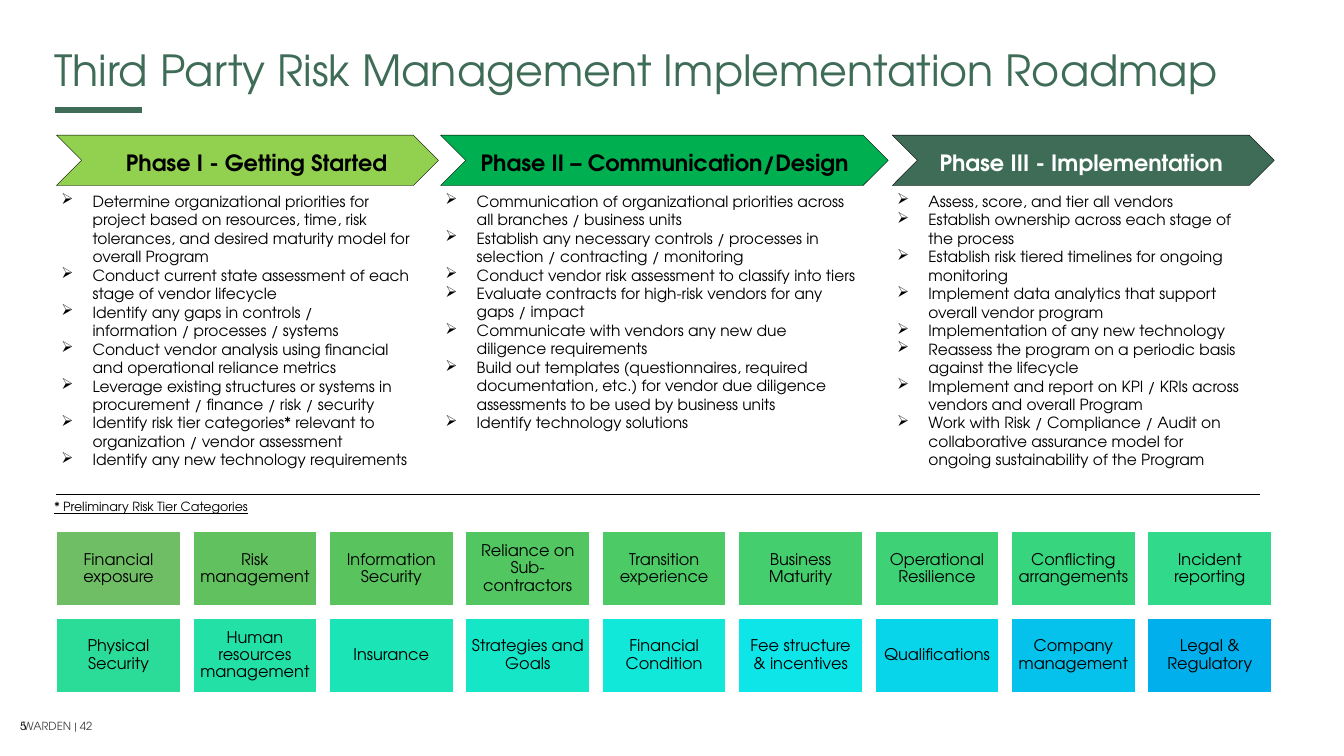
from dataclasses import dataclass

from lxml.etree import SubElement
from pptx import Presentation
from pptx.dml.color import RGBColor
from pptx.enum.shapes import MSO_CONNECTOR as Connector, MSO_SHAPE as Preset
from pptx.enum.text import MSO_ANCHOR as Anchor, PP_ALIGN as Align
from pptx.oxml.ns import qn
from pptx.util import Inches, Pt


@dataclass(frozen=True)
class Theme:
    font: str = "TeX Gyre Adventor"
    ink: str = "000000"
    paper: str = "FFFFFF"
    forest: str = "3E6C57"
    green: str = "00B050"
    lime: str = "92D050"
    footer: str = "414042"
    title_size: float = 30.6
    phase_size: float = 16
    tile_size: float = 11.5
    bullet_size: float = 11
    note_size: float = 9
    footer_size: float = 8


THEME = Theme()
WIDTH, HEIGHT = Inches(13.33), Inches(7.5)

# Columns: chevron left and width, heading left and width, list width and height
# (percent of the slide), fill, heading colour, heading, bullets
PHASES = [
    (4.2, 28.43, 8.63, 24, 27.68, 45.33, THEME.lime, THEME.ink,
     "Phase I - Getting Started", [
         "Determine organizational priorities for project based on resources, time, "
         "risk tolerances, and desired maturity model for overall Program",
         "Conduct current state assessment of each stage of vendor lifecycle",
         "Identify any gaps in controls / information / processes / systems",
         "Conduct vendor analysis using financial and operational reliance metrics",
         "Leverage existing structures or systems in procurement / finance / risk / security",
         "Identify risk tier categories* relevant to organization / vendor assessment",
         "Identify any new technology requirements"]),
    (32.78, 33.31, 35.03, 31.66, 32.26, 33.47, THEME.green, THEME.ink,
     "Phase II – Communication/Design", [
         "Communication of organizational priorities across all branches / business units",
         "Establish any necessary controls / processes in selection / contracting / monitoring",
         "Conduct vendor risk assessment to classify into tiers",
         "Evaluate contracts for high-risk vendors for any gaps / impact",
         "Communicate with vendors any new due diligence requirements",
         "Build out templates (questionnaires, required documentation, etc.) for vendor "
         "due diligence assessments to be used by business units",
         "Identify technology solutions"]),
    (66.39, 28.43, 69.17, 28.66, 27.68, 38.4, THEME.forest, THEME.paper,
     "Phase III - Implementation", [
         "Assess, score, and tier all vendors",
         "Establish ownership across each stage of the process",
         "Establish risk tiered timelines for ongoing monitoring",
         "Implement data analytics that support overall vendor program",
         "Implementation of any new technology",
         "Reassess the program on a periodic basis against the lifecycle",
         "Implement and report on KPI / KRIs across vendors and overall Program",
         "Work with Risk / Compliance / Audit on collaborative assurance model for "
         "ongoing sustainability of the Program"]),
]

TILES_PER_ROW = 9
RISK_TILES = [
    ("Financial exposure", "6FBE65"), ("Risk management", "62C15F"),
    ("Information Security", "59C45E"), ("Reliance on Sub-contractors", "52C761"),
    ("Transition experience", "4CCA66"), ("Business Maturity", "45CE6D"),
    ("Operational Resilience", "3ED175"), ("Conflicting arrangements", "38D57F"),
    ("Incident reporting", "31D98A"), ("Physical Security", "2ADC97"),
    ("Human resources management", "22E0A6"), ("Insurance", "1BE4B7"),
    ("Strategies and Goals", "16E6C8"), ("Financial Condition", "11E8DA"),
    ("Fee structure & incentives", "0DE5E9"), ("Qualifications", "08D4EA"),
    ("Company management", "04C2EB"), ("Legal & Regulatory", "00AFEC"),
]


def across(percent):
    return round(WIDTH * percent / 100)


def down(percent):
    return round(HEIGHT * percent / 100)


def place(left, top, width, height):
    return across(left), down(top), across(width), down(height)


def style(paragraph, size, color=THEME.ink, bold=False, underline=False):
    for run in paragraph.runs:
        font = run.font
        font.name, font.size = THEME.font, Pt(size)
        font.bold, font.underline = bold, underline
        font.color.rgb = RGBColor.from_string(color)


def add_text(slide, area, text, size, anchor=Anchor.TOP, **look):
    frame = slide.shapes.add_textbox(*place(*area)).text_frame
    frame.word_wrap = True
    frame.vertical_anchor = anchor
    frame.text = text
    for paragraph in frame.paragraphs:
        style(paragraph, size, **look)
    return frame


def add_block(slide, preset, area, fill, line, line_width):
    shape = slide.shapes.add_shape(preset, *place(*area))
    shape.shadow.inherit = False
    shape.fill.solid()
    shape.fill.fore_color.rgb = RGBColor.from_string(fill)
    shape.line.color.rgb = RGBColor.from_string(line)
    shape.line.width = Pt(line_width)
    return shape


def add_rule(slide, start, end, top, color, width):
    rule = slide.shapes.add_connector(
        Connector.STRAIGHT, across(start), down(top), across(end), down(top))
    rule.line.color.rgb = RGBColor.from_string(color)
    rule.line.width = Pt(width)
    SubElement(rule._element.spPr, qn("a:effectLst"))


def add_bullets(slide, area, items):
    frame = add_text(slide, area, "\n".join(items), THEME.bullet_size)
    for paragraph in frame.paragraphs:
        properties = paragraph._p.get_or_add_pPr()
        properties.set("marL", str(Inches(0.31)))
        properties.set("indent", str(-Inches(0.31)))
        SubElement(properties, qn("a:buChar"), char="➢")


def add_phase(slide, left, width, text_left, text_width, list_width, list_height,
              fill, color, heading, items):
    add_block(slide, Preset.CHEVRON, (left, 17.87, width, 6.67), fill, THEME.ink, 0.25)
    add_bullets(slide, (left - 0.37, 24.7, list_width, list_height), items)
    add_text(slide, (text_left, 19.1, text_width, 4.93), heading,
             THEME.phase_size, color=color, bold=True)


def add_tile(slide, index, label, fill):
    row, column = divmod(index, TILES_PER_ROW)
    area = (4.2 + 10.15 * column, 70.27 + 11.47 * row, 9.23, 9.87)
    frame = add_block(slide, Preset.RECTANGLE, area, fill, THEME.paper, 1).text_frame
    frame.word_wrap = True
    frame.vertical_anchor = Anchor.MIDDLE
    frame.margin_left = frame.margin_right = Inches(0.05)
    frame.margin_top = frame.margin_bottom = Inches(0.05)
    frame.text = label
    paragraph = frame.paragraphs[0]
    paragraph.alignment = Align.CENTER
    paragraph.line_spacing = 0.9
    style(paragraph, THEME.tile_size)


def main():
    presentation = Presentation()
    presentation.slide_width, presentation.slide_height = WIDTH, HEIGHT
    slide = presentation.slides.add_slide(presentation.slide_layouts[6])

    # Footer and slide number
    add_text(slide, (0.98, 91.6, 22.36, 6), "WARDEN | 42", THEME.footer_size,
             Anchor.BOTTOM, color=THEME.footer)
    add_text(slide, (0.75, 91.6, 22.36, 6), "5", THEME.footer_size, Anchor.BOTTOM)

    # Title with accent
    title = add_text(slide, (3.3, 2.53, 93.25, 10.67),
                     "Third Party Risk Management Implementation Roadmap",
                     THEME.title_size, Anchor.BOTTOM, color=THEME.forest)
    title.paragraphs[0].line_spacing = 0.8
    add_rule(slide, 4.13, 10.58, 14.53, THEME.forest, 4.5)

    # Phases
    for phase in PHASES:
        add_phase(slide, *phase)

    # Risk tier categories
    add_rule(slide, 4.2, 93.77, 65.33, THEME.ink, 0.5)
    add_text(slide, (3.3, 65.33, 28.81, 3.33), "* Preliminary Risk Tier Categories",
             THEME.note_size, underline=True)
    for index, (label, fill) in enumerate(RISK_TILES):
        add_tile(slide, index, label, fill)

    presentation.save("out.pptx")


if __name__ == "__main__":
    main()
